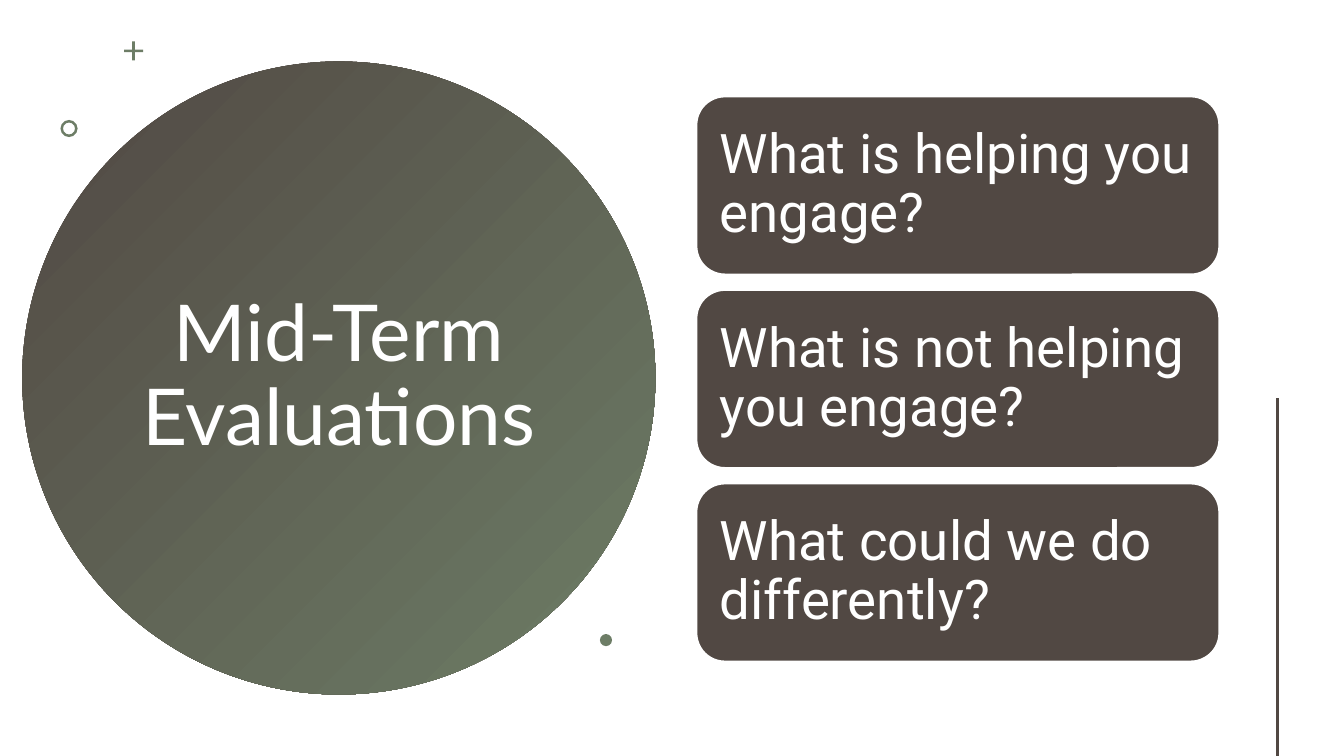
from lxml import etree
from pptx import Presentation
from pptx.dml.color import RGBColor
from pptx.enum.shapes import MSO_CONNECTOR, MSO_SHAPE
from pptx.enum.text import MSO_ANCHOR, PP_ALIGN
from pptx.oxml.ns import qn
from pptx.util import Inches, Pt

ELLIPSE = MSO_SHAPE.OVAL
CARD = MSO_SHAPE.ROUNDED_RECTANGLE
MIDDLE = MSO_ANCHOR.MIDDLE
LEFT, CENTER = PP_ALIGN.LEFT, PP_ALIGN.CENTER

TITLE = "Mid-Term Evaluations"
QUESTIONS = [
    "What is helping you engage?",
    "What is not helping you engage?",
    "What could we do differently?",
]
COLORS = {"brown": "514843", "green": "6D7D66", "white": "FFFFFF"}
ORNAMENTS = [
    (MSO_SHAPE.CROSS, 1.23, 0.41, 0.19, 0.43),
    (MSO_SHAPE.DONUT, 0.6, 1.19, 0.17, 0.15),
    (ELLIPSE, 5.95, 6.29, 0.12, None),
]

SLIDE_WIDTH, SLIDE_HEIGHT = 13.33, 7.5
CIRCLE_LEFT, CIRCLE_SIZE = 0.22, 6.28
CARD_LEFT, CARD_TOP, CARD_WIDTH, CARD_HEIGHT = 6.89, 0.94, 5.22, 1.8
CARD_STEP = CARD_HEIGHT + 0.12
RULE_X, RULE_TOP = 12.67, 3.95


def color(name):
    return RGBColor.from_string(COLORS[name])


def add_shape(page, kind, left, top, width, height, fill):
    shape = page.shapes.add_shape(
        kind, Inches(left), Inches(top), Inches(width), Inches(height))
    shape.shadow.inherit = False
    shape.fill.solid()
    shape.fill.fore_color.rgb = color(fill)
    shape.line.fill.background()
    return shape


def write(shape, text, font, size, align, side, edge):
    frame = shape.text_frame
    frame.text = text
    frame.word_wrap = True
    frame.vertical_anchor = MIDDLE
    frame.margin_left = frame.margin_right = Inches(side)
    frame.margin_top = frame.margin_bottom = Inches(edge)
    para = frame.paragraphs[0]
    para.alignment = align
    para.line_spacing = 0.9
    span = para.runs[0]
    span.font.name = font
    span.font.size = Pt(size)
    span.font.color.rgb = color("white")


def add_title(page):
    top = (SLIDE_HEIGHT - CIRCLE_SIZE) / 2
    circle = add_shape(page, ELLIPSE, CIRCLE_LEFT, top,
                       CIRCLE_SIZE, CIRCLE_SIZE, "brown")
    circle.fill.gradient()
    circle.fill.gradient_angle = 315
    for stop, name in zip(circle.fill.gradient_stops, ("brown", "green")):
        stop.color.rgb = color(name)
    write(circle, TITLE, "Lato", 56, CENTER, 0.22, 0.05)


def add_ornaments(page):
    for kind, left, top, size, thickness in ORNAMENTS:
        ornament = add_shape(page, kind, left, top, size, size, "green")
        if thickness is not None:
            ornament.adjustments[0] = thickness


def add_questions(page):
    for row, question in enumerate(QUESTIONS):
        card = add_shape(page, CARD, CARD_LEFT, CARD_TOP + row * CARD_STEP,
                         CARD_WIDTH, CARD_HEIGHT, "brown")
        card.line.color.rgb = color("white")
        card.line.width = Pt(3.78)
        write(card, question, "Roboto", 39, LEFT, 0.16, 0.16)


def add_rule(page):
    rule = page.shapes.add_connector(
        MSO_CONNECTOR.STRAIGHT, Inches(RULE_X), Inches(RULE_TOP),
        Inches(RULE_X), Inches(SLIDE_HEIGHT))
    rule.line.color.rgb = color("brown")
    rule.line.width = Pt(2)
    etree.SubElement(rule.element.spPr, qn("a:effectLst"))


def main():
    deck = Presentation()
    deck.slide_width = Inches(SLIDE_WIDTH)
    deck.slide_height = Inches(SLIDE_HEIGHT)
    page = deck.slides.add_slide(deck.slide_layouts[6])
    add_title(page)
    add_ornaments(page)
    add_questions(page)
    add_rule(page)
    deck.save("out.pptx")


if __name__ == "__main__":
    main()
